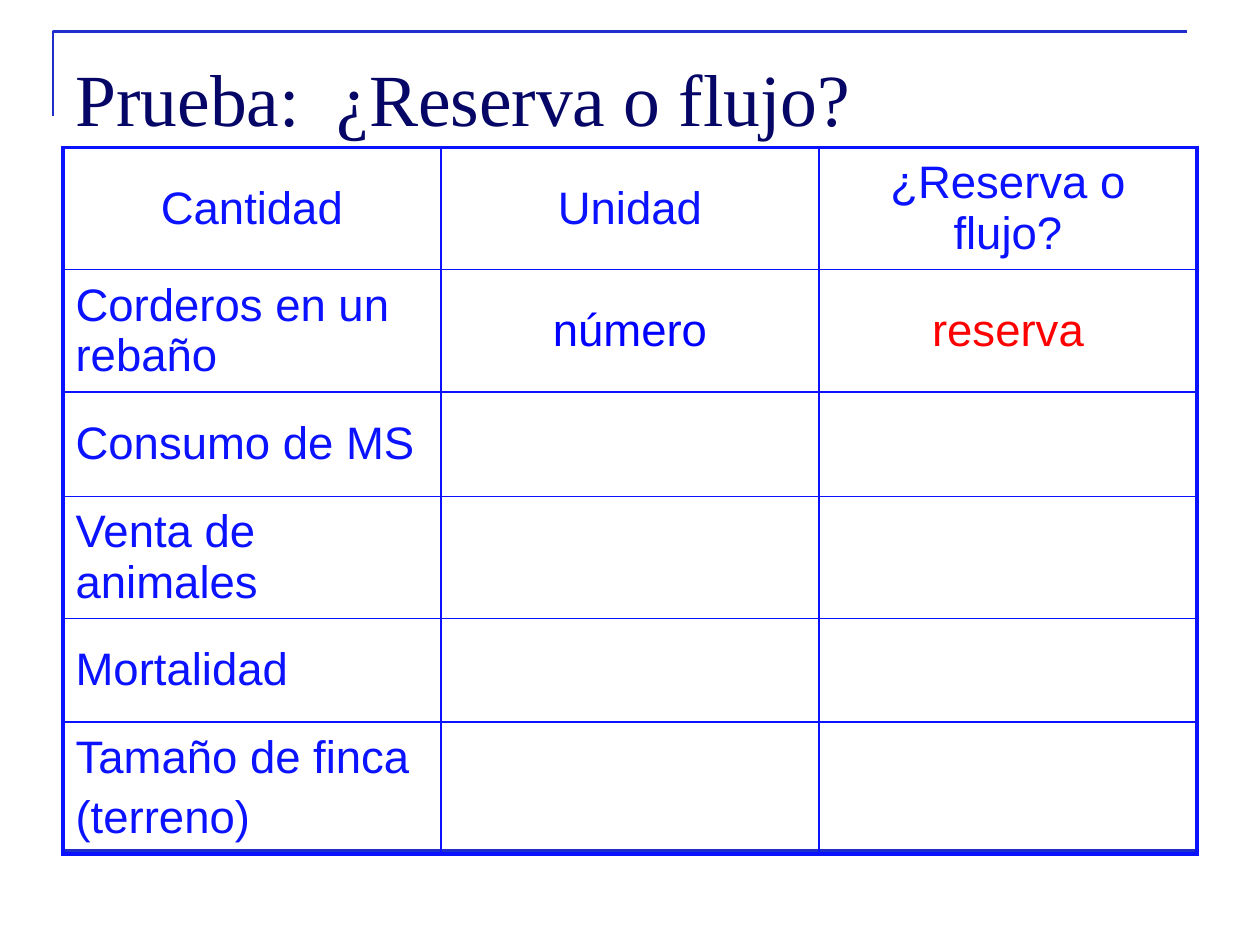
from lxml import etree
from pptx import Presentation, util as u
from pptx.dml.color import RGBColor
from pptx.enum import shapes, text
from pptx.oxml.ns import qn

TITLE = "Prueba:  ¿Reserva o flujo?"
ROWS = [
    (0.97, ["Cantidad", "Unidad", "¿Reserva o flujo?"]),
    (0.97, ["Corderos en un rebaño", "número", "reserva"]),
    (0.83, ["Consumo de MS", "", ""]),
    (0.97, ["Venta de animales", "", ""]),
    (0.82, ["Mortalidad", "", ""]),
    (1.05, ["Tamaño de finca\n(terreno)", "", ""]),
]
BLUE, NAVY, RULE = "0A12FF", "060666", "202ECC"
ANSWERS = {(1, 1): "0000FF", (1, 2): "FF0000"}
LEFT, WIDTH, TOP = 0.5, 9, 1.17
COLS = 3


def color(code):
    return RGBColor.from_string(code)


def style(par, face, size, code):
    par.font.name, par.font.size = face, u.Pt(size)
    par.font.color.rgb = color(code)


def rule(shape):
    """Give a line its colour and width, without a shadow."""
    shape.line.color.rgb = color(RULE)
    shape.line.width = u.Pt(1.5)
    etree.SubElement(shape._element.spPr, qn("a:effectLst"))


def border(cell, side, width):
    props = cell._tc.get_or_add_tcPr()
    line = etree.SubElement(props, qn("a:ln" + side), w=str(u.Pt(width)))
    fill = etree.SubElement(line, qn("a:solidFill"))
    etree.SubElement(fill, qn("a:srgbClr"), val=BLUE)


def fill_cell(cell, row, col, words):
    outer = {"L": col == 0, "R": col == COLS - 1,
             "T": row == 0, "B": row == len(ROWS) - 1}
    for side, edge in outer.items():
        border(cell, side, 2.25 if edge else 1)
    cell.fill.background()
    cell.vertical_anchor = text.MSO_ANCHOR.MIDDLE
    if not words:
        return
    frame = cell.text_frame
    frame.text = words
    for n, par in enumerate(frame.paragraphs):
        style(par, "Arial", 26, ANSWERS.get((row, col), BLUE))
        if n:
            par.space_before = u.Pt(5.2)
        if row == 0 or col:
            par.alignment = text.PP_ALIGN.CENTER


deck = Presentation()
deck.slide_width, deck.slide_height = u.Inches(10), u.Inches(7.5)
slide = deck.slides.add_slide(deck.slide_layouts[6])

# Corner rule beside the title, and the rule at the foot
pen = slide.shapes.build_freeform(u.Inches(0.42), u.Inches(0.92))
pen.add_line_segments([(u.Inches(0.42), u.Inches(0.25)),
                       (u.Inches(9.42), u.Inches(0.25))], close=False)
corner = pen.convert_to_shape()
corner.fill.background()
rule(corner)
rule(slide.shapes.add_connector(
    shapes.MSO_CONNECTOR.STRAIGHT, u.Inches(LEFT), u.Inches(6.75),
    u.Inches(LEFT + WIDTH), u.Inches(6.75)))

head = slide.shapes.add_textbox(
    u.Inches(LEFT), u.Inches(0.3), u.Inches(WIDTH), u.Inches(1.25)).text_frame
head.word_wrap = True
head.margin_top = u.Inches(0.12)
head.text = TITLE
style(head.paragraphs[0], "Times New Roman", 42, NAVY)

table = slide.shapes.add_table(
    len(ROWS), COLS, u.Inches(LEFT), u.Inches(TOP), u.Inches(WIDTH),
    u.Inches(sum(high for high, _ in ROWS))).table
table.first_row = table.horz_banding = False
for col in table.columns:
    col.width = u.Inches(WIDTH / COLS)
for r, (high, cells) in enumerate(ROWS):
    table.rows[r].height = u.Inches(high)
    for c, words in enumerate(cells):
        fill_cell(table.cell(r, c), r, c, words)

deck.save("out.pptx")
